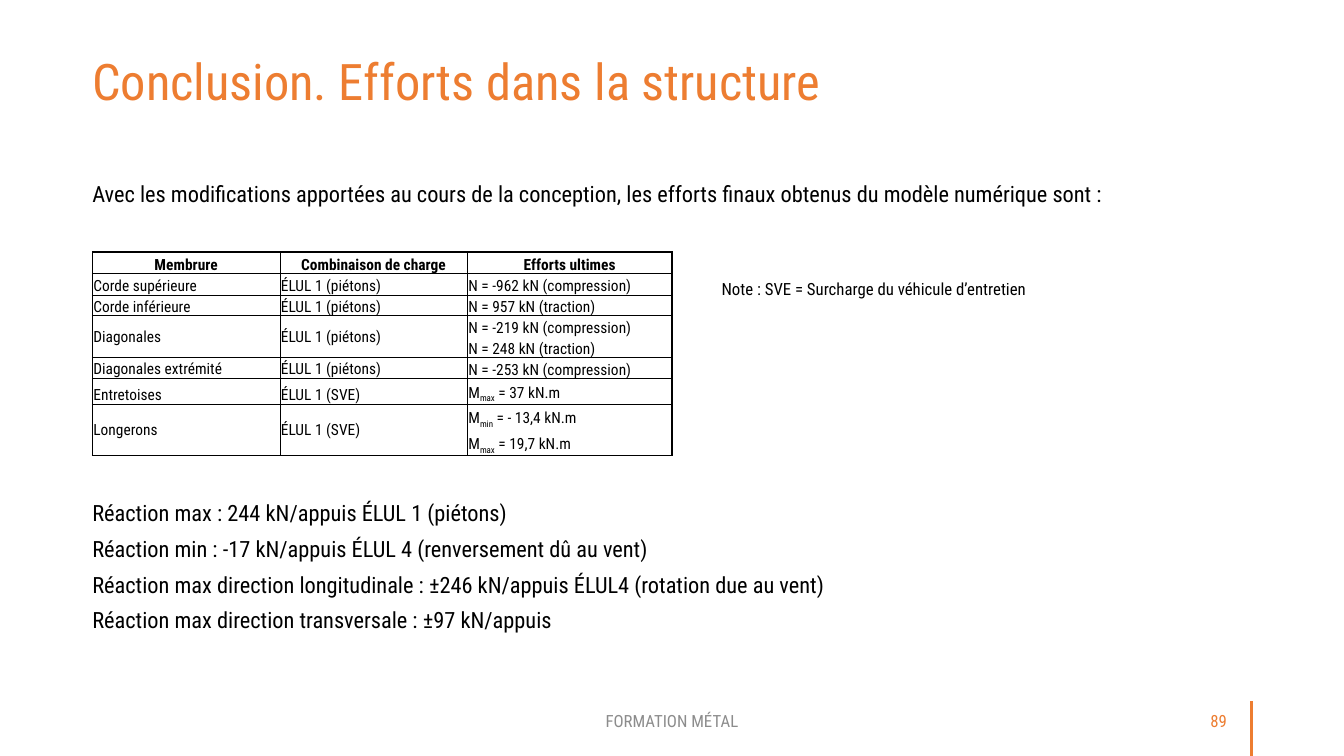
"""Build the slide that sums up the final forces in the structure."""
from dataclasses import dataclass
from typing import Any

from lxml import etree
from pptx import Presentation
from pptx import util as u
from pptx.dml import color
from pptx.enum import shapes, text
from pptx.oxml import ns

WIDTH, HEIGHT = u.Inches(13.33), u.Inches(7.5)
COLUMNS, ROWS = 160, 90
FONT = "Roboto Condensed"
ORANGE, BLACK, GREY, WHITE = "ED7D31", "000000", "8C8C8C", "FFFFFF"
LEFT, CENTER, RIGHT = text.PP_ALIGN.LEFT, text.PP_ALIGN.CENTER, text.PP_ALIGN.RIGHT
TOP, MIDDLE, BOTTOM = text.MSO_ANCHOR.TOP, text.MSO_ANCHOR.MIDDLE, text.MSO_ANCHOR.BOTTOM
THIN, THICK = 0.5, 1


@dataclass(frozen=True)
class Place:
    column: float
    row: float
    columns: float
    rows: float


@dataclass(frozen=True)
class Passage:
    place: Place
    lines: tuple[str, ...]
    size: float
    hue: str = BLACK
    align: Any = LEFT
    anchor: Any = TOP
    spacing: float = 1
    inset: bool = True
    fit: Any = text.MSO_AUTO_SIZE.NONE


@dataclass(frozen=True)
class Member:
    name: str
    load: str
    efforts: tuple[str, ...]
    heights: tuple[float, ...]
    anchor: Any = BOTTOM


TITLE = Passage(Place(11, 6.8, 128.9, 12.12), ("Conclusion. Efforts dans la structure",),
                36, ORANGE, spacing=0.9, inset=False)
PASSAGES = (
    Passage(Place(53, 83.4, 54, 4.8), ("FORMATION MÉTAL",), 12, GREY, CENTER, MIDDLE),
    Passage(Place(131.4, 83.4, 15.84, 4.8), ("89",), 12, ORANGE, RIGHT, MIDDLE),
    Passage(Place(11, 22.08, 138, 3),
            ("Avec les modifications apportées au cours de la conception, "
             "les efforts finaux obtenus du modèle numérique sont :",),
            16, spacing=0.8, inset=False),
    Passage(Place(11, 60.1, 138, 19.2),
            ("Réaction max : 244 kN/appuis ÉLUL 1 (piétons)",
             "Réaction min : -17 kN/appuis ÉLUL 4 (renversement dû au vent)",
             "Réaction max direction longitudinale : ±246 kN/appuis ÉLUL4 (rotation due au vent)",
             "Réaction max direction transversale : ±97 kN/appuis"),
            16, spacing=0.8, inset=False),
    Passage(Place(84.72, 32.6, 48.24, 3.6),
            ("Note : SVE = Surcharge du véhicule d’entretien",), 12,
            fit=text.MSO_AUTO_SIZE.SHAPE_TO_FIT_TEXT),
)
WALKERS, VEHICLE = "ÉLUL 1 (piétons)", "ÉLUL 1 (SVE)"
MEMBERS = (
    Member("Membrure", "Combinaison de charge", ("Efforts ultimes",), (2.6,)),
    Member("Corde supérieure", WALKERS, ("N = -962 kN (compression)",), (2.5,)),
    Member("Corde inférieure", WALKERS, ("N = 957 kN (traction)",), (2.5,)),
    Member("Diagonales", WALKERS, ("N = -219 kN (compression)", "N = 248 kN (traction)"),
           (2.5, 2.5), MIDDLE),
    Member("Diagonales extrémité", WALKERS, ("N = -253 kN (compression)",), (2.5,), MIDDLE),
    Member("Entretoises", VEHICLE, ("M|max| = 37 kN.m",), (3,)),
    Member("Longerons", VEHICLE, ("M|min| = - 13,4 kN.m", "M|max| = 19,7 kN.m"),
           (3, 3.1), MIDDLE),
)
MEMBER_WIDTHS = (22.32, 22.32, 24.36)


def across(columns: float) -> u.Emu:
    """Return the length of a number of grid columns."""
    return u.Emu(round(WIDTH * columns / COLUMNS))


def down(rows: float) -> u.Emu:
    """Return the length of a number of grid rows."""
    return u.Emu(round(HEIGHT * rows / ROWS))


def box(place: Place) -> tuple[u.Emu, u.Emu, u.Emu, u.Emu]:
    """Return left, top, width and height of a place."""
    return across(place.column), down(place.row), across(place.columns), down(place.rows)


def rgb(hue: str) -> color.RGBColor:
    """Return the colour of a hex string."""
    return color.RGBColor.from_string(hue)


def put(target: Any, formats: dict[str, Any]) -> None:
    """Set each format value on the target."""
    for name, value in formats.items():
        setattr(target, name, value)


def write(paragraph: Any, words: str, size: float, hue: str, bold: bool = False) -> None:
    """Add words to a paragraph, with the parts between bars as subscripts."""
    for index, part in enumerate(words.split("|")):
        run = paragraph.add_run()
        run.text = part
        put(run.font, {"name": FONT, "size": u.Pt(size), "bold": bold})
        run.font.color.rgb = rgb(hue)
        if index % 2:
            run.font._element.set("baseline", "-25000")


def fill_passage(shape: Any, passage: Passage) -> None:
    """Place a shape and write its passage."""
    put(shape, dict(zip(("left", "top", "width", "height"), box(passage.place))))
    frame = shape.text_frame
    put(frame, {"word_wrap": True, "auto_size": passage.fit, "vertical_anchor": passage.anchor})
    if not passage.inset:
        put(frame, dict.fromkeys(("margin_left", "margin_top", "margin_right", "margin_bottom"), 0))
    for index, line in enumerate(passage.lines):
        paragraph = frame.add_paragraph() if index else frame.paragraphs[0]
        put(paragraph, {"alignment": passage.align, "line_spacing": passage.spacing})
        if index:
            paragraph.space_before = u.Pt(10)
        write(paragraph, line, passage.size, passage.hue)


def set_borders(cell: Any, weights: dict[str, float]) -> None:
    """Draw the sides of a cell, leaving out those of no weight."""
    properties = cell._tc.get_or_add_tcPr()
    for side, weight in weights.items():
        edge = etree.SubElement(properties, ns.qn(f"a:ln{side}"), w=str(u.Pt(weight)))
        if weight:
            paint = etree.SubElement(edge, ns.qn("a:solidFill"))
            etree.SubElement(paint, ns.qn("a:srgbClr"), val=BLACK)
        else:
            etree.SubElement(edge, ns.qn("a:noFill"))


def fill_cell(cell: Any, words: str, anchor: Any, header: bool, weights: dict[str, float]) -> None:
    """Write and format one cell."""
    set_borders(cell, weights)
    cell.fill.solid()
    cell.fill.fore_color.rgb = rgb(WHITE)
    put(cell, {"margin_left": across(0.12), "margin_right": across(0.12),
               "margin_top": down(0.12), "margin_bottom": 0, "vertical_anchor": anchor})
    paragraph = cell.text_frame.paragraphs[0]
    paragraph.alignment = CENTER if header else LEFT
    write(paragraph, words, 11, BLACK, header)


def add_members(slide: Any) -> None:
    """Add the table of forces by member."""
    heights = [height for member in MEMBERS for height in member.heights]
    place = Place(11, 30, sum(MEMBER_WIDTHS), sum(heights))
    forces = slide.shapes.add_table(len(heights), len(MEMBER_WIDTHS), *box(place)).table
    put(forces, {"first_row": False, "horz_banding": False})
    for column, width in zip(forces.columns, MEMBER_WIDTHS):
        column.width = across(width)
    for row, height in zip(forces.rows, heights):
        row.height = down(height)
    first = 0
    for member in MEMBERS:
        last = first + len(member.efforts) - 1
        header = first == 0
        above = THICK if first <= 1 else THIN
        below = THICK if header or last == len(heights) - 1 else THIN
        for column, words in enumerate((member.name, member.load)):
            cell = forces.cell(first, column)
            if last > first:
                cell.merge(forces.cell(last, column))
            fill_cell(cell, words, member.anchor, header,
                      {"L": THIN if column else THICK, "R": THIN, "T": above, "B": below})
        for row, effort in enumerate(member.efforts, first):
            fill_cell(forces.cell(row, 2), effort, BOTTOM, header,
                      {"L": THIN, "R": THICK, "T": above if row == first else 0,
                       "B": below if row == last else 0})
        first = last + 1


def add_page_mark(slide: Any) -> None:
    """Add the upright line beside the page number."""
    mark = slide.shapes.add_connector(shapes.MSO_CONNECTOR.STRAIGHT, across(149), down(ROWS),
                                      across(149), down(83.4))
    mark.line.width = u.Pt(2.25)
    mark.line.color.rgb = rgb(ORANGE)
    etree.SubElement(mark._element.spPr, ns.qn("a:effectLst"))


def main() -> None:
    """Build and save the slide."""
    deck = Presentation()
    put(deck, {"slide_width": WIDTH, "slide_height": HEIGHT})
    slide = deck.slides.add_slide(deck.slide_layouts[5])
    add_page_mark(slide)
    fill_passage(slide.shapes.title, TITLE)
    for passage in PASSAGES:
        fill_passage(slide.shapes.add_textbox(*box(passage.place)), passage)
    add_members(slide)
    deck.save("out.pptx")


if __name__ == "__main__":
    main()
